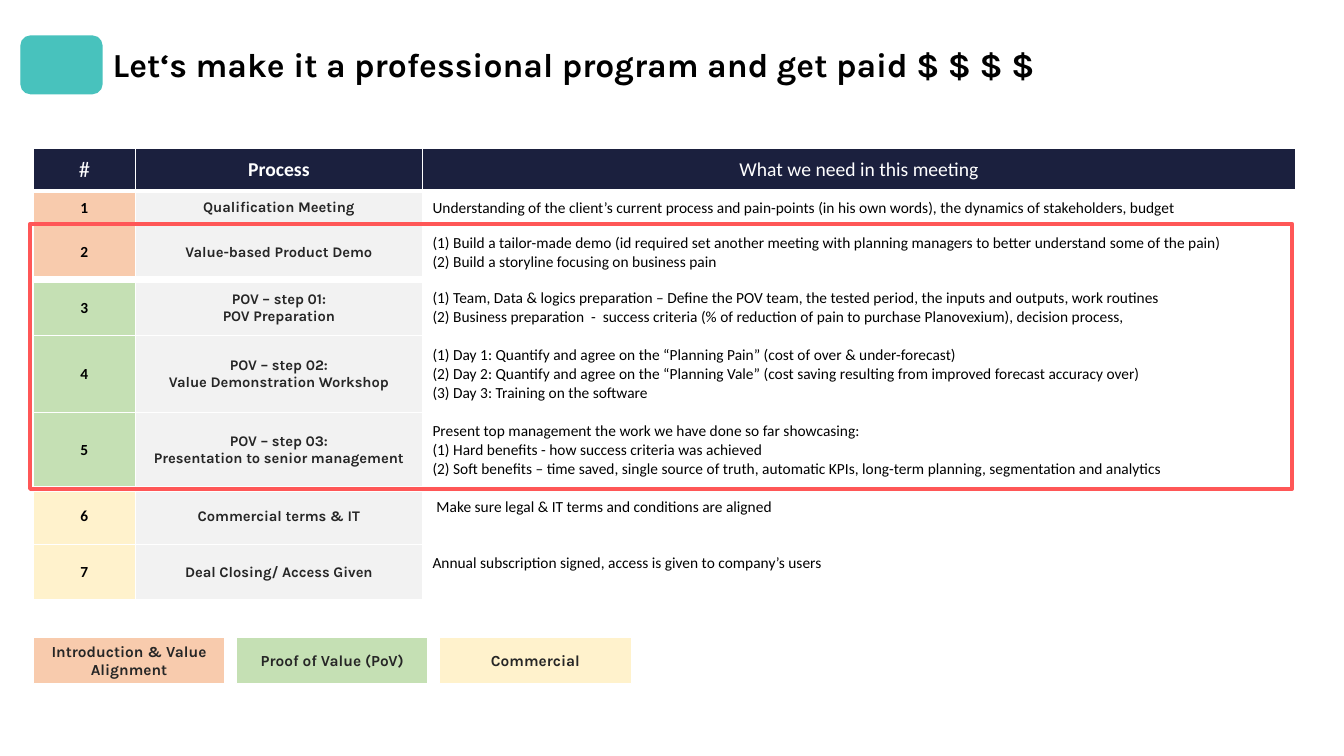
from copy import deepcopy
from typing import NamedTuple

from lxml.etree import SubElement
from pptx import Presentation
from pptx.dml.color import RGBColor
from pptx.enum.shapes import MSO_CONNECTOR, MSO_SHAPE
from pptx.enum.text import MSO_ANCHOR, PP_ALIGN
from pptx.oxml.ns import qn
from pptx.util import Cm, Pt

HUES = {
    "navy": "1B203E", "peach": "F8CBAD", "green": "C5E0B4", "cream": "FFF2CC",
    "grey": "F2F2F2", "white": "FFFFFF", "black": "000000", "dark": "262626",
    "teal": "48C2BD", "red": "FF5757",
}


class Step(NamedTuple):
    hue: str
    high: float
    name: str
    need: str
    lift: float = 0
    inset: float = 0


class Key(NamedTuple):
    hue: str
    text: str


class Rule(NamedTuple):
    left: float
    right: float
    top: float


STEPS = [
    Step("peach", 0.84, "Qualification Meeting",
         "Understanding of the client’s current process and pain-points (in his own words), "
         "the dynamics of stakeholders, budget"),
    Step("peach", 1.4, "Value-based Product Demo",
         "(1) Build a tailor-made demo (id required set another meeting with planning managers "
         "to better understand some of the pain)\n"
         "(2) Build a storyline focusing on business pain"),
    Step("green", 1.4, "POV – step 01:\nPOV Preparation",
         "(1) Team, Data & logics preparation – Define the POV team, the tested period, "
         "the inputs and outputs, work routines\n"
         "(2) Business preparation  -  success criteria (% of reduction of pain to purchase "
         "Planovexium), decision process,"),
    Step("green", 1.93, "POV – step 02:\nValue Demonstration Workshop",
         "(1) Day 1: Quantify and agree on the “Planning Pain” (cost of over & under-forecast)\n"
         "(2) Day 2: Quantify and agree on the “Planning Vale” (cost saving resulting from "
         "improved forecast accuracy over)\n"
         "(3) Day 3: Training on the software"),
    Step("green", 1.93, "POV – step 03:\nPresentation to senior management",
         "Present top management the work we have done so far showcasing:\n"
         "(1) Hard benefits - how success criteria was achieved\n"
         "(2) Soft benefits – time saved, single source of truth, automatic KPIs, "
         "long-term planning, segmentation and analytics"),
    Step("cream", 1.4, "Commercial terms & IT",
         "Make sure legal & IT terms and conditions are aligned", 0.46, 0.1),
    Step("cream", 1.4, "Deal Closing/ Access Given",
         "Annual subscription signed, access is given to company’s users", 0.46),
]
KEYS = [
    Key("peach", "Introduction & Value Alignment"),
    Key("green", "Proof of Value (PoV)"),
    Key("cream", "Commercial"),
]
RULES = [Rule(0.84, 32.66, 7.04), Rule(0.61, 32.41, 12.32)]
COLS = [2.57, 7.24, 22]
HEAD = 1.09
LEFT = 0.84


def tint(hue: str) -> RGBColor:
    return RGBColor.from_string(HUES[hue])


def write(frame, text: str, *, size: float, font: str = "Karla", hue: str = "dark",
          bold: bool = True, align=PP_ALIGN.CENTER) -> None:
    """Fill a text frame with one paragraph; line ends become line breaks."""
    para = frame.paragraphs[0]
    para.text = text
    para.alignment = align
    for run in para.runs:
        run.font.size = Pt(size)
        run.font.name = font
        run.font.bold = bold
        run.font.color.rgb = tint(hue)
    look = para._p.find(qn("a:r")).find(qn("a:rPr"))
    for stop in para._p.findall(qn("a:br")):
        stop.append(deepcopy(look))


def edge(cell, base: float = 1) -> None:
    """Give a cell white borders, with its own width at the bottom."""
    props = cell._tc.get_or_add_tcPr()
    for spot, (side, wide) in enumerate(zip("LRTB", (1, 1, 1, base))):
        line = SubElement(props, qn(f"a:ln{side}"), w=str(Pt(wide)))
        fill = SubElement(line, qn("a:solidFill"))
        SubElement(fill, qn("a:srgbClr"), val=HUES["white"])
        props.insert(spot, line)


def paint(cell, hue: str, base: float = 1) -> None:
    cell.fill.solid()
    cell.fill.fore_color.rgb = tint(hue)
    cell.vertical_anchor = MSO_ANCHOR.MIDDLE
    edge(cell, base)


def block(slide, kind, left: float, top: float, wide: float, high: float, *,
          fill: str | None, line: str, width: float = 1):
    shape = slide.shapes.add_shape(kind, Cm(left), Cm(top), Cm(wide), Cm(high))
    shape.shadow.inherit = False
    if fill:
        shape.fill.solid()
        shape.fill.fore_color.rgb = tint(fill)
    else:
        shape.fill.background()
    shape.line.color.rgb = tint(line)
    shape.line.width = Pt(width)
    return shape


def draw_keys(slide) -> None:
    for spot, key in enumerate(KEYS):
        box = block(slide, MSO_SHAPE.RECTANGLE, LEFT + spot * 5.12, 16.05, 4.83, 1.17,
                    fill=key.hue, line="white")
        box.text_frame.word_wrap = True
        box.text_frame.vertical_anchor = MSO_ANCHOR.MIDDLE
        write(box.text_frame, key.text, size=11)


def draw_table(slide) -> None:
    highs = [HEAD] + [step.high for step in STEPS]
    table = slide.shapes.add_table(len(highs), len(COLS), Cm(LEFT), Cm(3.73),
                                   Cm(sum(COLS)), Cm(sum(highs))).table
    table.horz_banding = False
    for col, wide in zip(table.columns, COLS):
        col.width = Cm(wide)
    for row, high in zip(table.rows, highs):
        row.height = Cm(high)

    heads = [("#", 16, False), ("Process", 14, True),
             ("What we need in this meeting", 14, False)]
    for cell, (text, size, bold) in zip(table.rows[0].cells, heads):
        paint(cell, "navy", 3)
        write(cell.text_frame, text, size=size, font="Calibri", hue="white", bold=bold)

    for rank, step in enumerate(STEPS, 1):
        mark, name, need = table.rows[rank].cells
        for cell, hue in ((mark, step.hue), (name, "grey"), (need, "white")):
            paint(cell, hue)
        write(mark.text_frame, str(rank), size=11, font="Calibri", hue="black")
        write(name.text_frame, step.name, size=10.5)
        need.margin_left = Cm(0.25 + step.inset)
        need.margin_bottom = Cm(0.13 + step.lift)
        write(need.text_frame, step.need, size=11, font="Calibri", hue="black",
              bold=False, align=PP_ALIGN.LEFT)


def draw_rules(slide) -> None:
    for rule in RULES:
        line = slide.shapes.add_connector(MSO_CONNECTOR.STRAIGHT, Cm(rule.left), Cm(rule.top),
                                          Cm(rule.right), Cm(rule.top))
        line.line.color.rgb = tint("white")
        line.line.width = Pt(4.5)
        SubElement(line._element.spPr, qn("a:effectLst"))


def draw_title(slide) -> None:
    frame = slide.shapes.add_textbox(Cm(2.59), Cm(0.97), Cm(26.7), Cm(1.27)).text_frame
    frame.word_wrap = True
    frame.vertical_anchor = MSO_ANCHOR.MIDDLE
    write(frame, "Let‘s make it a professional program and get paid $ $ $ $",
          size=24, hue="black", align=PP_ALIGN.LEFT)


def main() -> None:
    deck = Presentation()
    deck.slide_width, deck.slide_height = Cm(33.87), Cm(19.05)
    slide = deck.slides.add_slide(deck.slide_layouts[6])
    draw_keys(slide)
    draw_table(slide)
    block(slide, MSO_SHAPE.ROUNDED_RECTANGLE, 0.53, 0.91, 2.04, 1.45, fill="teal", line="teal")
    draw_rules(slide)
    block(slide, MSO_SHAPE.RECTANGLE, 0.76, 5.64, 31.8, 6.68, fill=None, line="red", width=3)
    draw_title(slide)
    deck.save("out.pptx")


if __name__ == "__main__":
    main()
